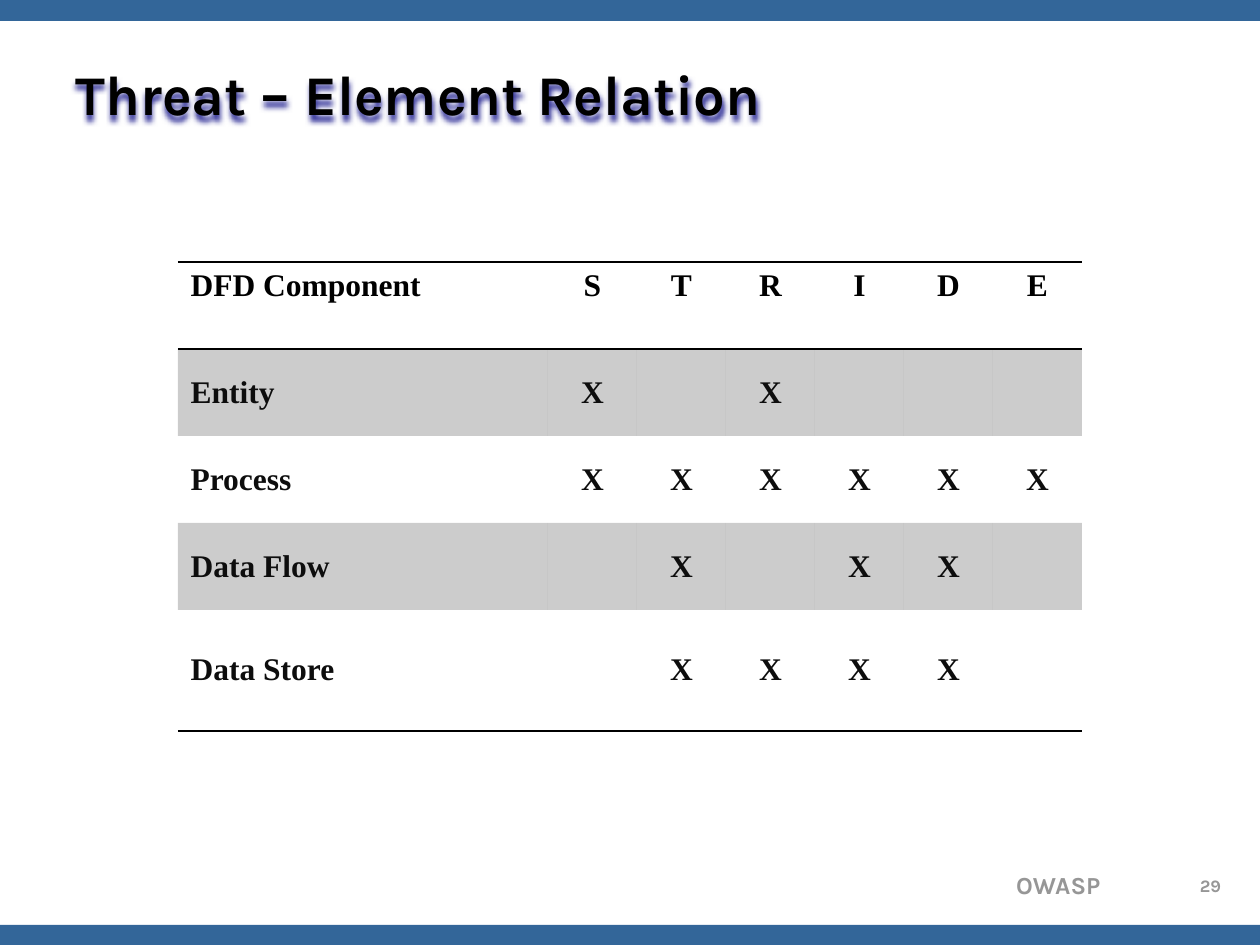
"""Build the threat and element relation slide with its STRIDE table."""
from lxml.etree import SubElement
from pptx import Presentation
from pptx.dml.color import RGBColor
from pptx.enum.shapes import MSO_SHAPE
from pptx.enum.text import MSO_ANCHOR as ANCHOR, PP_ALIGN as ALIGN
from pptx.oxml import parse_xml
from pptx.oxml.ns import nsdecls, qn
from pptx.util import Pt

PX = 914400 // 126
COLORS = {"bar": "336699", "footer": "969696", "black": "000000",
          "body": "0D0D0D", "shadow": "333399"}
HEADING_FONT, TABLE_FONT = "Karla", "Times New Roman"
TITLE = "Threat – Element Relation"
THREATS = "STRIDE"
COMPONENTS = [("Entity", "SR"), ("Process", "STRIDE"),
              ("Data Flow", "TID"), ("Data Store", "TRID")]
FOOTERS = [("OWASP", (784, 864, 329, 42), 14, ALIGN.RIGHT),
           ("29", (1183, 869, 55, 32), 10, ALIGN.CENTER)]
BAR_TOPS = (0, 925)
TABLE_BOX = (178, 262, 906, 469)
COLUMN_WIDTHS = [370] + [89] * len(THREATS)
ROW_HEIGHTS = [87, 87, 87, 87, 121]
NO_STYLE = "{2D5ABB26-0587-4C30-8999-92F81FD0307C}"


def emu(box):
    return [length * PX for length in box]


def add_text(frame, text, font, size, color, align=ALIGN.LEFT):
    paragraph = frame.paragraphs[0]
    paragraph.alignment = align
    run = paragraph.add_run()
    run.text = text
    run.font.name, run.font.size, run.font.bold = font, Pt(size), True
    run.font.color.rgb = RGBColor.from_string(COLORS[color])


def add_bar(slide, top):
    bar = slide.shapes.add_shape(MSO_SHAPE.RECTANGLE, *emu((0, top, 1260, 21)))
    bar.shadow.inherit = False
    bar.fill.solid()
    bar.fill.fore_color.rgb = RGBColor.from_string(COLORS["bar"])
    bar.line.fill.background()


def set_title(slide):
    title = slide.shapes.title
    title.left, title.top, title.width, title.height = emu((63, 38, 1134, 110))
    title.text_frame.vertical_anchor = ANCHOR.MIDDLE
    add_text(title.text_frame, TITLE, HEADING_FONT, 32, "black")
    title.fill.background()
    title._element.spPr.append(parse_xml(
        f'<a:effectLst {nsdecls("a")}><a:outerShdw blurRad="38100" dist="38100" '
        f'dir="5400000" algn="t" rotWithShape="0"><a:srgbClr val="{COLORS["shadow"]}"/>'
        '</a:outerShdw></a:effectLst>'))


def add_border(cell, side, position):
    cell._tc.get_or_add_tcPr().insert(position, parse_xml(
        f'<a:{side} {nsdecls("a")} w="12700"><a:solidFill>'
        f'<a:srgbClr val="{COLORS["black"]}"/></a:solidFill></a:{side}>'))


def shade(cell):
    cell.fill.solid()
    cell.fill.fore_color.rgb = RGBColor.from_string(COLORS["black"])
    color = cell._tc.tcPr.find(".//" + qn("a:srgbClr"))
    SubElement(color, qn("a:alpha"), val="20000")


def add_threat_table(slide):
    rows = [["DFD Component", *THREATS]]
    rows += [[name] + ["X" if threat in marks else "" for threat in THREATS]
             for name, marks in COMPONENTS]
    frame = slide.shapes.add_table(len(rows), len(rows[0]), *emu(TABLE_BOX))
    table = frame.table
    table.first_row = table.horz_banding = False
    table._tbl.tblPr.find(qn("a:tableStyleId")).text = NO_STYLE
    for column, width in zip(table.columns, COLUMN_WIDTHS):
        column.width = width * PX
    for row, height in zip(table.rows, ROW_HEIGHTS):
        row.height = height * PX
    for row_index, row in enumerate(rows):
        header, last = row_index == 0, row_index == len(rows) - 1
        for column_index, text in enumerate(row):
            cell = table.cell(row_index, column_index)
            cell.vertical_anchor = ANCHOR.TOP if header else ANCHOR.MIDDLE
            if row_index % 2:
                shade(cell)
            else:
                cell.fill.background()
            if header or last:
                add_border(cell, "lnB", 0)
            if header:
                add_border(cell, "lnT", 0)
            if text:
                add_text(cell.text_frame, text, TABLE_FONT, 18,
                         "black" if header else "body",
                         ALIGN.CENTER if column_index else ALIGN.LEFT)


def main():
    presentation = Presentation()
    presentation.slide_width, presentation.slide_height = emu((1260, 945))
    slide = presentation.slides.add_slide(presentation.slide_layouts[5])
    for top in BAR_TOPS:
        add_bar(slide, top)
    set_title(slide)
    for text, box, size, align in FOOTERS:
        text_box = slide.shapes.add_textbox(*emu(box))
        text_box.text_frame.word_wrap = True
        add_text(text_box.text_frame, text, HEADING_FONT, size, "footer", align)
    add_threat_table(slide)
    presentation.save("out.pptx")


if __name__ == "__main__":
    main()
